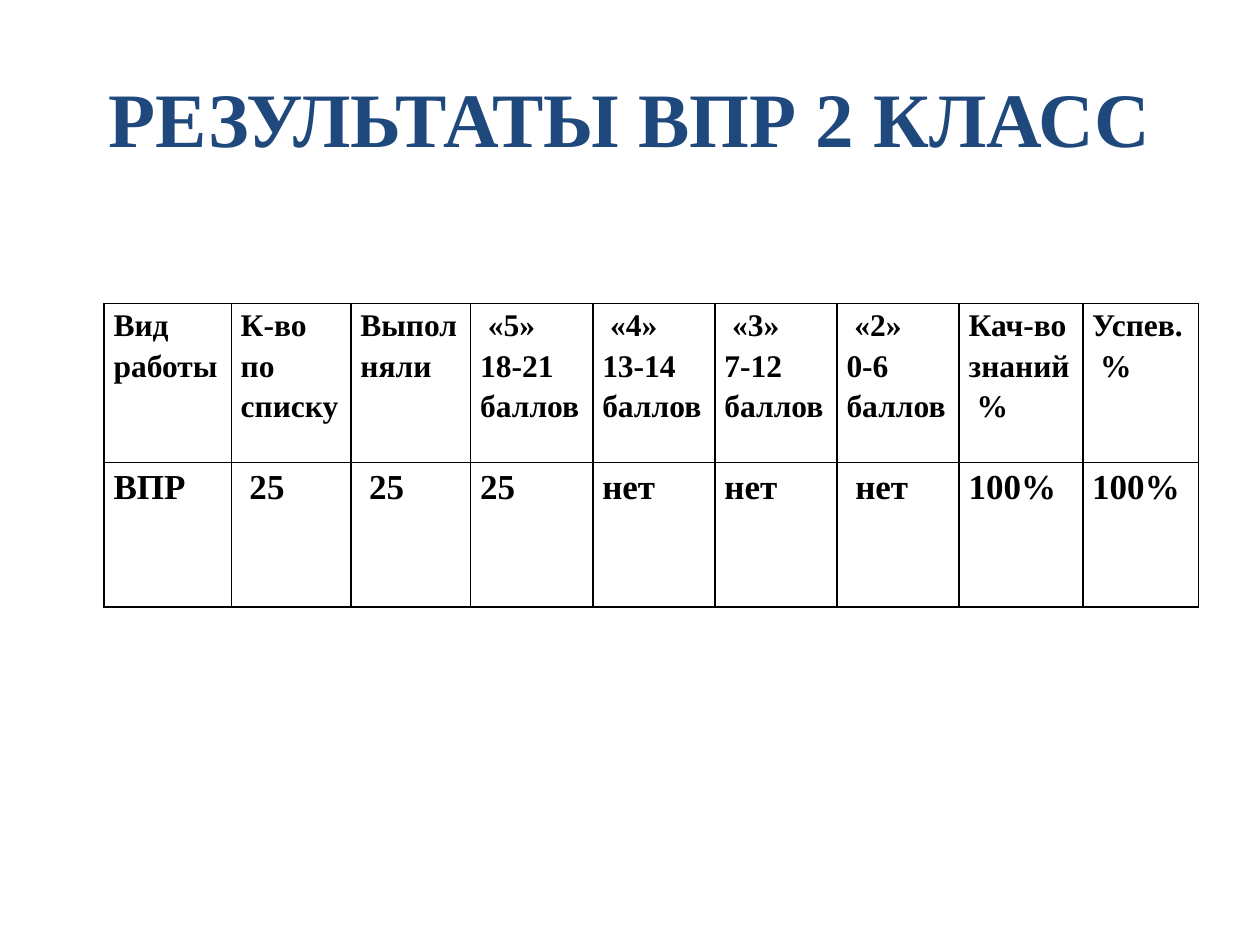
from lxml import etree
from pptx import Presentation
from pptx import util as u
from pptx.dml.color import RGBColor
from pptx.enum import text
from pptx.oxml.ns import qn

COLORS = {"title": "1F497D", "ink": "000000"}
FONT = "Times New Roman"
COLUMNS = [72.7, 68.4, 68.4, 69.8, 69.8, 69.8, 69.8, 70.6, 66.2]
ROWS = [90.7, 82.8]
HEADER = [
    "Вид работы", "К-во\nпо\nсписку", "Выпол\nняли",
    " «5»\n18-21 баллов", " «4»\n13-14\nбаллов", " «3»\n7-12\nбаллов",
    " «2»\n0-6\nбаллов", "Кач-во\nзнаний\n %", "Успев.\n %",
]
RESULTS = ["ВПР", " 25", " 25", "25", "нет", "нет", " нет", "100%", "100%"]


def write(tf, content, size=18, color="ink", align=None, spacing=None):
    tf.word_wrap = True
    for i, line in enumerate(content.split("\n")):
        p = tf.paragraphs[0] if i == 0 else tf.add_paragraph()
        p.alignment = align
        p.line_spacing = spacing
        r = p.add_run()
        r.text = line
        r.font.name = FONT
        r.font.size = u.Pt(size)
        r.font.bold = True
        r.font.color.rgb = RGBColor.from_string(COLORS[color])


class SlideBuilder:
    """Draws styled elements on the current slide."""

    def __init__(self, slide, border_width=1):
        self.slide = slide
        self.border_width = border_width

    def title(self, content, left, top, width, height):
        box = (u.Pt(v) for v in (left, top, width, height))
        tf = self.slide.shapes.add_textbox(*box).text_frame
        tf.vertical_anchor = text.MSO_ANCHOR.MIDDLE
        write(tf, content, size=44, color="title", align=text.PP_ALIGN.CENTER)

    def border(self, cell):
        tcPr = cell._tc.get_or_add_tcPr()
        for i, side in enumerate(("lnL", "lnR", "lnT", "lnB")):
            ln = etree.Element(qn(f"a:{side}"), w=str(u.Pt(self.border_width)))
            fill = etree.SubElement(ln, qn("a:solidFill"))
            etree.SubElement(fill, qn("a:srgbClr"), val=COLORS["ink"])
            tcPr.insert(i, ln)

    def table(self, rows, sizes, left, top, widths, heights):
        box = (u.Pt(v) for v in (left, top, sum(widths), sum(heights)))
        table = self.slide.shapes.add_table(len(rows), len(widths), *box).table
        table.first_row = table.horz_banding = False
        for column, width in zip(table.columns, widths):
            column.width = u.Pt(width)
        for row, height, values, size in zip(table.rows, heights, rows, sizes):
            row.height = u.Pt(height)
            for cell, value in zip(row.cells, values):
                cell.fill.background()
                cell.margin_left = cell.margin_right = u.Pt(5.4)
                cell.margin_top = cell.margin_bottom = 0
                write(cell.text_frame, value, size=size, spacing=1.15)
                self.border(cell)


def main():
    prs = Presentation()
    prs.slide_width, prs.slide_height = u.Pt(720), u.Pt(540)
    s = SlideBuilder(prs.slides.add_slide(prs.slide_layouts[6]))
    s.title("РЕЗУЛЬТАТЫ ВПР 2 КЛАСС", 36, 21.6, 648, 90)
    s.table([HEADER, RESULTS], [18, 20], 59.5, 173.5, COLUMNS, ROWS)
    prs.save("out.pptx")


if __name__ == "__main__":
    main()
